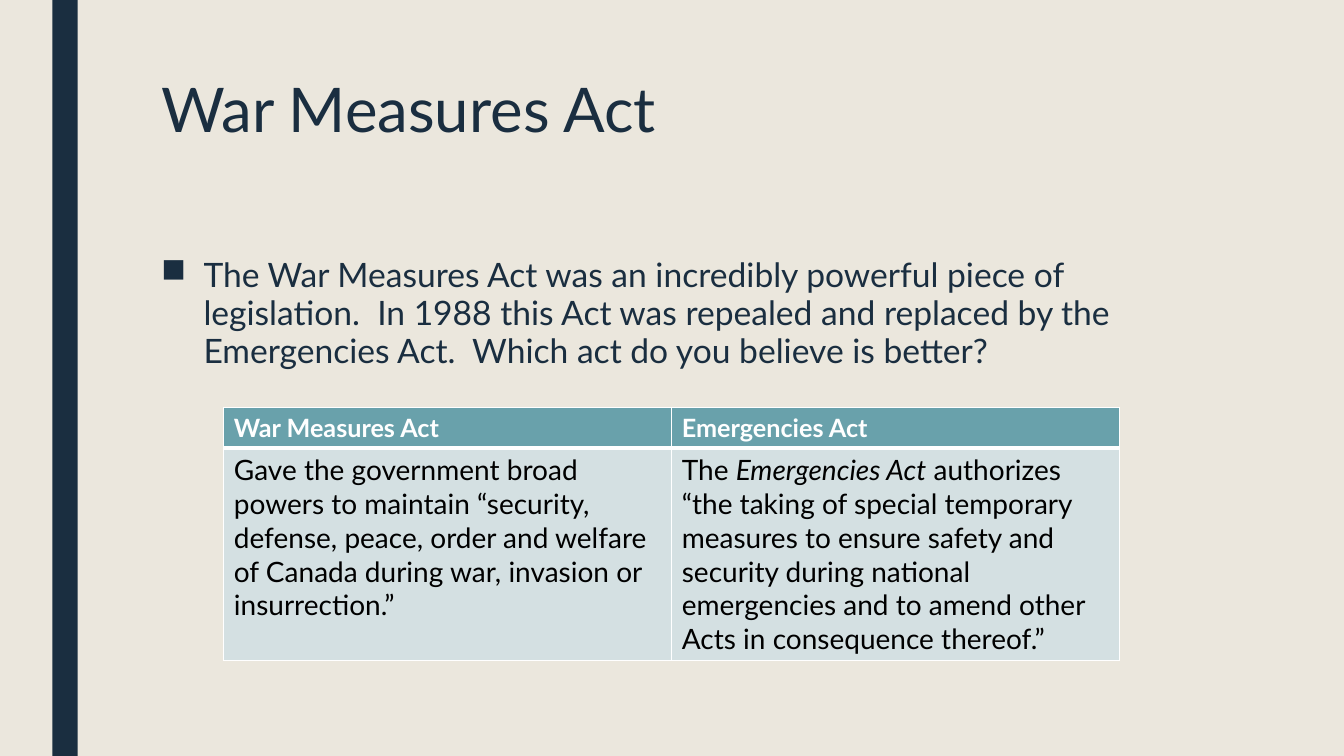
"""Builds a slide that compares the War Measures Act with the Emergencies Act."""
from lxml.etree import SubElement
from pptx import Presentation
from pptx.dml.color import RGBColor
from pptx.enum.shapes import MSO_SHAPE
from pptx.enum.text import MSO_ANCHOR
from pptx.oxml.ns import qn
from pptx.util import Cm, Pt

FONT = "Lato"
COLORS = {
    "background": "EBE7DD",
    "navy": "1A2E40",
    "teal": "69A1AB",
    "pale": "D4E0E2",
    "white": "FFFFFF",
    "black": "000000",
}
TITLE = "War Measures Act"
QUESTION = (
    "The War Measures Act was an incredibly powerful piece of legislation.  "
    "In 1988 this Act was repealed and replaced by the Emergencies Act.  "
    "Which act do you believe is better?"
)
HEADERS = ["War Measures Act", "Emergencies Act"]
POWERS = [
    [("Gave the government broad powers to maintain “security, defense, peace, "
      "order and welfare of Canada during war, invasion or insurrection.”", False)],
    [("The ", False),
     ("Emergencies Act", True),
     (" authorizes “the taking of special temporary measures to ensure safety "
      "and security during national emergencies and to amend other Acts in "
      "consequence thereof.”", False)],
]


def color(name):
    """Return the named colour."""
    return RGBColor.from_string(COLORS[name])


def paint(fill, name):
    """Give a fill one solid colour."""
    fill.solid()
    fill.fore_color.rgb = color(name)


def add_text(p, text, size=24, ink="navy", bold=False, italic=False):
    """Add a formatted run to a paragraph."""
    r = p.add_run()
    r.text = text
    r.font.name = FONT
    r.font.size = Pt(size)
    r.font.bold = bold
    r.font.italic = italic
    r.font.color.rgb = color(ink)


def add_bar(slide, left, width, height):
    """Draw the full-height bar at the left."""
    sp = slide.shapes.add_shape(MSO_SHAPE.RECTANGLE, left, 0, width, height)
    sp.shadow.inherit = False
    paint(sp.fill, "navy")
    sp.line.fill.background()


def add_box(slide, left, top, width, height, line_spacing):
    """Add a wrapping text box and return its first paragraph."""
    tf = slide.shapes.add_textbox(left, top, width, height).text_frame
    tf.word_wrap = True
    tf.vertical_anchor = MSO_ANCHOR.TOP
    p = tf.paragraphs[0]
    p.line_spacing = line_spacing
    return p


def add_bullet(p, indent):
    """Turn a paragraph into a square-bulleted item."""
    p.space_before = Pt(10)
    p.space_after = Pt(2)
    pPr = p._p.get_or_add_pPr()
    pPr.set("marL", str(indent))
    pPr.set("indent", str(-indent))
    SubElement(pPr, qn("a:buChar"), char="■")


def style_cell(cell, fill, bottom):
    """Fill a cell and draw its white borders."""
    tcPr = cell._tc.get_or_add_tcPr()
    for side, width in (("L", 1), ("R", 1), ("T", 1), ("B", bottom)):
        ln = SubElement(tcPr, qn(f"a:ln{side}"), w=str(Pt(width)))
        solid = SubElement(ln, qn("a:solidFill"))
        SubElement(solid, qn("a:srgbClr"), val=COLORS["white"])
    paint(cell.fill, fill)


def add_comparison(slide, left, top, width, heights):
    """Add the table that sets the two acts side by side."""
    table = slide.shapes.add_table(2, 2, left, top, width, sum(heights)).table
    for row, height in zip(table.rows, heights):
        row.height = height
    for col, (header, powers) in enumerate(zip(HEADERS, POWERS)):
        head, body = table.cell(0, col), table.cell(1, col)
        style_cell(head, "teal", bottom=3)
        style_cell(body, "pale", bottom=1)
        add_text(head.text_frame.paragraphs[0], header, size=18, ink="white", bold=True)
        for text, italic in powers:
            add_text(body.text_frame.paragraphs[0], text, size=20, ink="black", italic=italic)


def main():
    """Build and save the slide."""
    prs = Presentation()
    prs.slide_width, prs.slide_height = Cm(33.87), Cm(19.05)
    slide = prs.slides.add_slide(prs.slide_layouts[6])
    paint(slide.background.fill, "background")
    add_bar(slide, Cm(1.32), Cm(0.64), prs.slide_height)

    p = add_box(slide, Cm(3.81), Cm(1.9), Cm(26.67), Cm(4.11), 0.89)
    add_text(p, TITLE, size=44)

    p = add_box(slide, Cm(3.81), Cm(6.35), Cm(26.67), Cm(9.96), 0.94)
    add_bullet(p, Cm(1.07))
    add_text(p, QUESTION)

    add_comparison(slide, Cm(5.64), Cm(10.26), Cm(22.58), [Cm(1.03), Cm(5.35)])
    prs.save("out.pptx")


if __name__ == "__main__":
    main()
